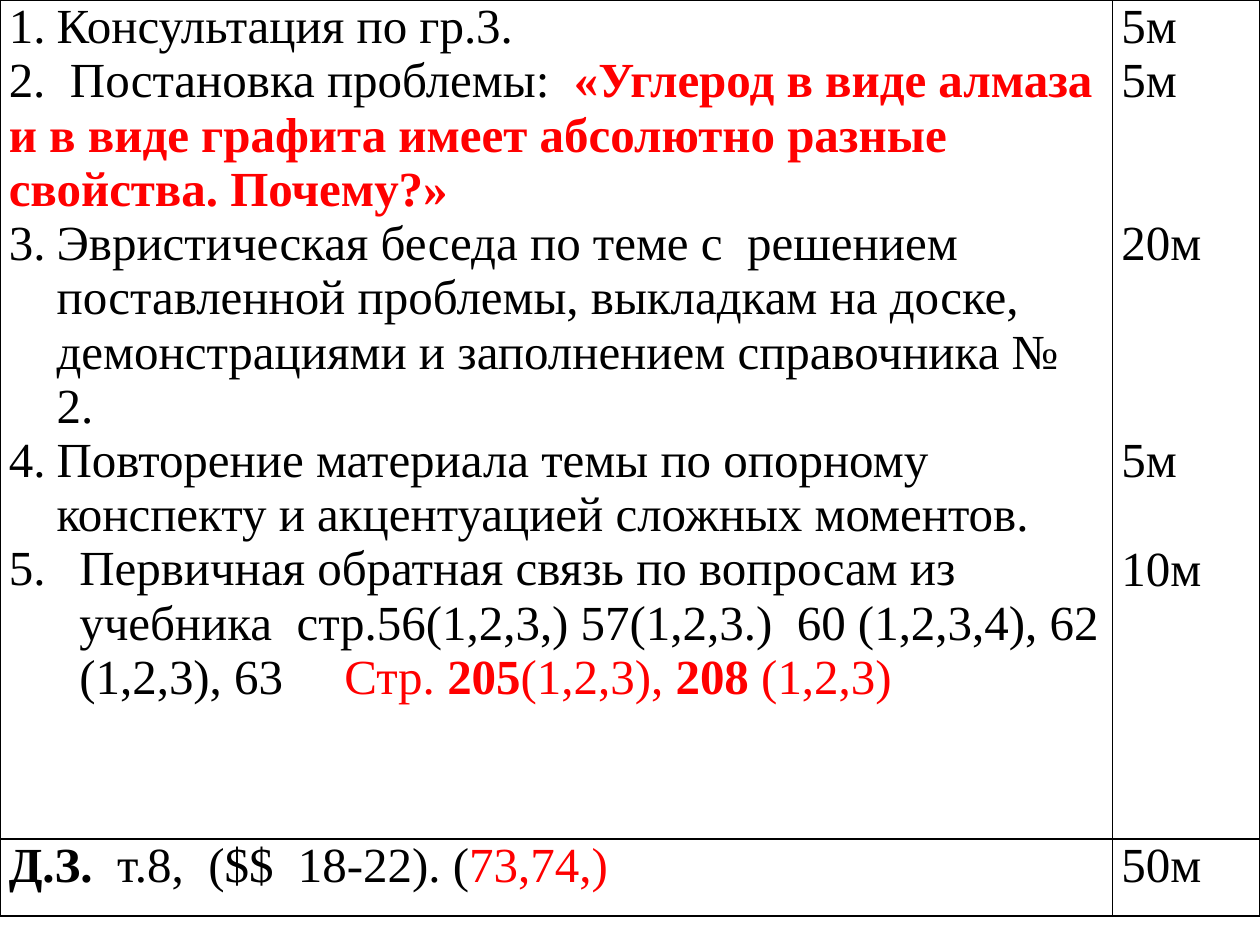
import pptx
import pptx.dml.color
import pptx.oxml
import pptx.oxml.ns
import pptx.util
from pptx.util import Inches

FONT = "Times New Roman"
BLACK, RED, WHITE = "000000", "FF0000", "FFFFFF"
LINE_HEIGHT = 31  # points taken by one line of 28 pt text

# Each stage: (runs, list number, hanging indent); a run is (text, colour, bold).
STAGES = [
    ([("Консультация по гр.3.", BLACK, False)], 1, 0.38),
    ([("2.  Постановка проблемы:  ", BLACK, False),
      ("«Углерод в виде алмаза и в виде графита имеет абсолютно разные "
       "свойства. Почему?»", RED, True)], None, 0),
    ([("Эвристическая беседа по теме с  решением поставленной проблемы, "
       "выкладкам на доске, демонстрациями и заполнением справочника № 2.",
       BLACK, False)], 3, 0.38),
    # Shares its start with the stage above, so the count runs on to 4.
    ([("Повторение материала темы по опорному конспекту и акцентуацией "
       "сложных моментов.", BLACK, False)], 3, 0.38),
    ([("Первичная обратная связь по вопросам из учебника  стр.56(1,2,3,) "
       "57(1,2,3.)  60 (1,2,3,4), 62 (1,2,3), 63    ", BLACK, False),
      (" Стр. ", RED, False), ("205", RED, True), ("(1,2,3), ", RED, False),
      ("208", RED, True), (" (1,2,3)", RED, False)], 5, 0.56),
]
# Each duration: (text, lines left free above it).
DURATIONS = [("5м", 0), ("5м", 0), ("20м", 2), ("5м", 3), ("10м", 1)]
HOMEWORK = [("Д.З.  ", BLACK, True), ("т.8,  ($$  18-22). (", BLACK, False),
            ("73,74,)", RED, False)]


def rgb(color):
    return pptx.dml.color.RGBColor.from_string(color)


def xml(tag, attributes, content=""):
    return pptx.oxml.parse_xml(
        f'<a:{tag} {pptx.oxml.ns.nsdecls("a")} {attributes}>{content}</a:{tag}>')


def add_paragraph(cell, runs, free_lines=0):
    """Fill the cell's first paragraph, or add one if that is in use."""
    tf = cell.text_frame
    p = tf.paragraphs[0] if not tf.text else tf.add_paragraph()
    p.space_before = pptx.util.Pt(free_lines * LINE_HEIGHT)
    for text, color, bold in runs:
        r = p.add_run()
        r.text = text
        r.font.name = FONT
        r.font.size = pptx.util.Pt(28)
        r.font.bold = bold
        r.font.color.rgb = rgb(color)
    return p


def number_paragraph(p, start, indent):
    pPr = p._p.get_or_add_pPr()
    pPr.set("marL", str(Inches(indent)))
    pPr.set("indent", str(-Inches(indent)))
    pPr.append(xml("buFont", f'typeface="{FONT}"'))
    pPr.append(xml("buAutoNum", f'type="arabicPeriod" startAt="{start}"'))


def format_cell(cell):
    cell.margin_left = cell.margin_right = Inches(0.07)
    cell.margin_top = cell.margin_bottom = 0
    cell.fill.solid()
    cell.fill.fore_color.rgb = rgb(WHITE)
    tcPr = cell._tc.get_or_add_tcPr()
    for i, side in enumerate(("lnL", "lnR", "lnT", "lnB")):
        tcPr.insert(i, xml(
            side, f'w="{pptx.util.Pt(1)}"',
            f'<a:solidFill><a:srgbClr val="{BLACK}"/></a:solidFill>'))


def add_plan_table(s, widths, heights):
    table = s.shapes.add_table(
        len(heights), len(widths), 0, 0,
        Inches(sum(widths)), Inches(sum(heights))).table
    table.first_row = table.horz_banding = False
    for column, width in zip(table.columns, widths):
        column.width = Inches(width)
    for row, height in zip(table.rows, heights):
        row.height = Inches(height)
    for cell in table.iter_cells():
        format_cell(cell)
    return table


def main():
    prs = pptx.Presentation()
    prs.slide_width, prs.slide_height = Inches(10), Inches(7.5)
    s = prs.slides.add_slide(prs.slide_layouts[6])
    table = add_plan_table(s, [8.83, 1.17], [6.66, 0.61])
    for runs, start, indent in STAGES:
        p = add_paragraph(table.cell(0, 0), runs)
        if start:
            number_paragraph(p, start, indent)
    for text, free_lines in DURATIONS:
        add_paragraph(table.cell(0, 1), [(text, BLACK, False)], free_lines)
    add_paragraph(table.cell(1, 0), HOMEWORK)
    add_paragraph(table.cell(1, 1), [("50м", BLACK, False)])
    prs.save("out.pptx")


if __name__ == "__main__":
    main()
